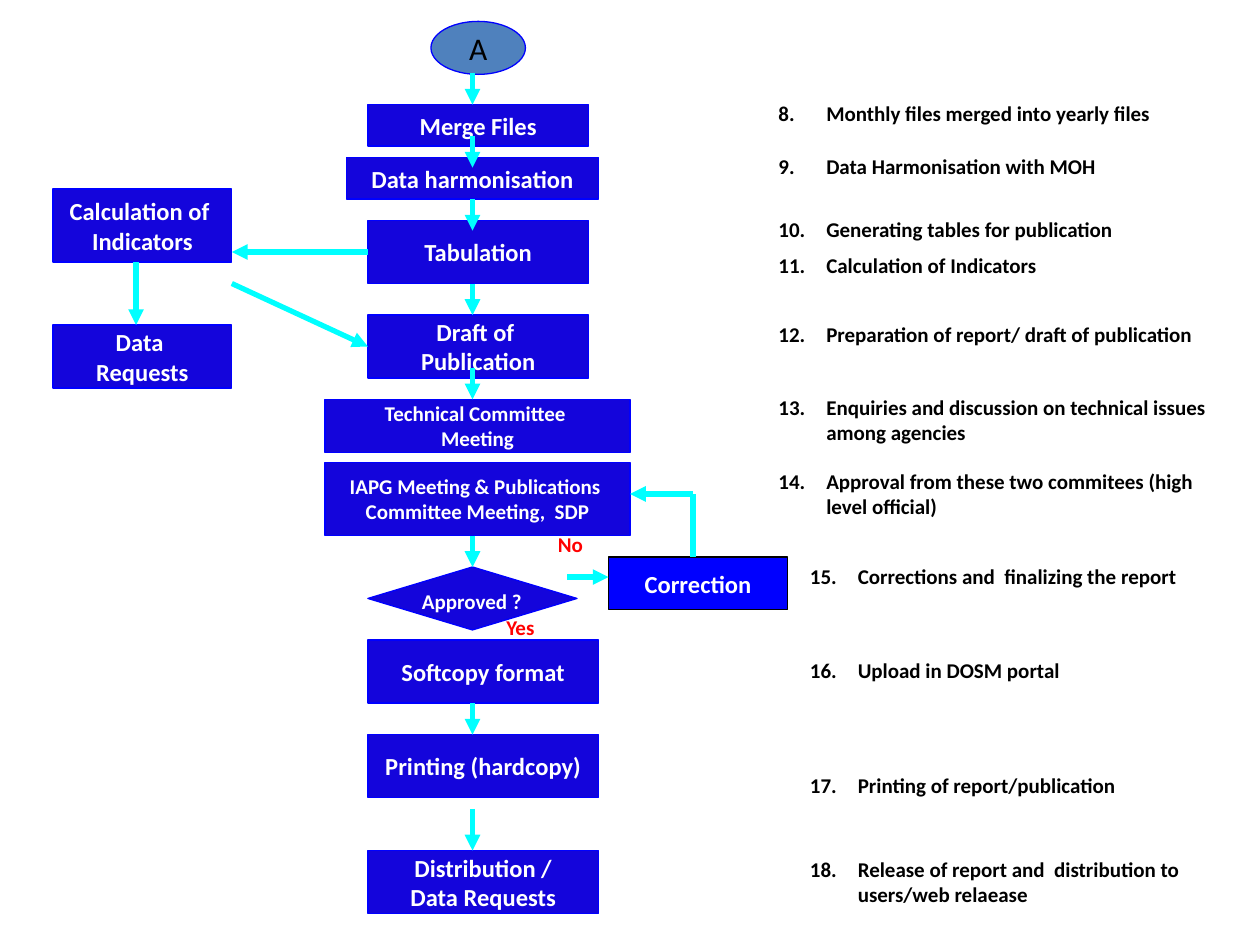
from dataclasses import dataclass

from lxml import etree
from pptx import Presentation
from pptx import util as u
from pptx.dml.color import RGBColor
from pptx.enum import shapes, text
from pptx.oxml.ns import qn


@dataclass(frozen=True)
class Theme:
    font: str = "Calibri"
    step: str = "1405DB"
    correction: str = "0000FF"
    start: str = "4F81BD"
    border: str = "0000FF"
    arrow: str = "00FFFF"
    dark: str = "000000"
    light: str = "FFFFFF"
    answer: str = "FF0000"
    start_size: int = 18
    step_size: int = 14
    small_size: int = 12
    border_width: float = 0.75
    arrow_width: float = 3


THEME = Theme()
SHAPE = shapes.MSO_SHAPE


@dataclass(frozen=True)
class Region:
    """Box in inches; its parts are placed from its top left corner."""
    left: float
    top: float
    width: float
    height: float

    def point(self, x, y):
        return u.Inches(self.left + x), u.Inches(self.top + y)

    def area(self, x, y, width, height):
        return *self.point(x, y), u.Inches(width), u.Inches(height)


def rgb(value):
    return RGBColor.from_string(value)


def write(frame, lines, size, color, bold=True, align=None):
    for index, line in enumerate(lines):
        paragraph = frame.add_paragraph() if index else frame.paragraphs[0]
        paragraph.text = line
        paragraph.alignment = align
        font = paragraph.font
        font.name, font.size, font.bold = THEME.font, u.Pt(size), bold
        font.color.rgb = rgb(color)


def add_node(slide, area, lines=(), size=THEME.step_size, kind=SHAPE.RECTANGLE,
             fill=THEME.step, border=THEME.border, color=THEME.light, bold=True):
    node = slide.shapes.add_shape(kind, *area)
    node.shadow.inherit = False
    node.fill.solid()
    node.fill.fore_color.rgb = rgb(fill)
    node.line.color.rgb = rgb(border)
    node.line.width = u.Pt(THEME.border_width)
    frame = node.text_frame
    frame.word_wrap = False
    frame.vertical_anchor = text.MSO_ANCHOR.MIDDLE
    write(frame, lines, size, color, bold, text.PP_ALIGN.CENTER)
    return node


def add_label(slide, area, lines, color):
    frame = slide.shapes.add_textbox(*area).text_frame
    frame.word_wrap = True
    frame.auto_size = text.MSO_AUTO_SIZE.SHAPE_TO_FIT_TEXT
    write(frame, lines, THEME.small_size, color)
    return frame


def add_arrow(slide, start, end, head=True):
    arrow = slide.shapes.add_connector(shapes.MSO_CONNECTOR.STRAIGHT, *start, *end)
    arrow.line.color.rgb = rgb(THEME.arrow)
    arrow.line.width = u.Pt(THEME.arrow_width)
    if head:
        etree.SubElement(arrow.line._get_or_add_ln(), qn("a:tailEnd"), type="triangle")
    etree.SubElement(arrow._element.spPr, qn("a:effectLst"))
    return arrow


def main_flow(slide, region):
    """Central column of steps; returns the nodes that side branches join."""
    inset, axis = 0.34, 1.17
    narrow, wide = 1.75, 1.83
    add_node(slide, region.area(0.84, 0, 0.75, 0.42), ["A"], THEME.start_size,
             SHAPE.OVAL, THEME.start, color=THEME.dark, bold=False)
    steps = [
        (inset, 0.66, narrow, 0.33, ["Merge Files"]),
        (0.17, 1.08, 2, 0.33, ["Data harmonisation"]),
        (inset, 1.58, narrow, 0.5, ["Tabulation"]),
        (inset, 2.33, narrow, 0.5, ["Draft of ", "Publication"]),
        (inset, 4.91, wide, 0.5, ["Softcopy format"]),
        (inset, 5.66, wide, 0.5, ["Printing (hardcopy)"]),
        (inset, 6.58, wide, 0.5, ["Distribution /", "Data Requests"]),
    ]
    nodes = {lines[0].strip(): add_node(slide, region.area(*place), lines)
             for *place, lines in steps}
    meetings = [
        (3, 0.42, ["Technical Committee ", "Meeting"]),
        (3.5, 0.58, ["IAPG Meeting & Publications ", "Committee Meeting,  SDP"]),
    ]
    for top, height, lines in meetings:
        add_node(slide, region.area(0, top, region.width, height), lines, THEME.small_size)
    decision = add_node(slide, region.area(inset, 4.33, 1.66, 0.5), kind=SHAPE.DIAMOND)

    for top in (0.41, 0.91, 1.41, 2.08, 2.75, 5.41):
        add_arrow(slide, region.point(axis, top), region.point(axis, top + 0.25))
    add_arrow(slide, region.point(axis, 6.25), region.point(axis, 6.58))
    to_decision = add_arrow(slide, region.point(axis, 4.08), region.point(axis, 4.33))
    to_decision.end_connect(decision, 0)

    add_label(slide, region.area(0.67, 4.45, 1.25, 0.3), ["Approved ?"], THEME.light)
    add_label(slide, region.area(1.34, 4.66, 1, 0.3), ["Yes"], THEME.answer)
    return nodes["Tabulation"], nodes["Draft of"]


def indicator_branch(slide, region, tabulation, draft):
    width, axis = 1.42, 0.66
    add_node(slide, region.area(0, 0, width, 0.58), ["Calculation of ", "Indicators"])
    add_node(slide, region.area(0, 1.08, width, 0.5), ["Data ", "Requests"])
    add_arrow(slide, region.point(axis, 0.58), region.point(axis, 1.08))
    from_tabulation = add_arrow(slide, region.point(region.width, 0.5),
                                region.point(width, 0.5))
    from_tabulation.begin_connect(tabulation, 1)
    to_draft = add_arrow(slide, region.point(width, 0.75),
                         region.point(region.width, 1.25))
    to_draft.end_connect(draft, 1)


def correction_loop(slide, region):
    corner = region.point(1.17, 0)
    add_node(slide, region.area(0.5, 0.5, 1.42, 0.42), ["Correction"],
             fill=THEME.correction, border=THEME.dark)
    add_arrow(slide, region.point(1.17, 0.5), corner, head=False)
    add_arrow(slide, corner, region.point(0.67, 0))
    add_arrow(slide, region.point(0.17, 0.66), region.point(0.5, 0.66))
    add_label(slide, region.area(0, 0.25, 1, 0.3), ["No"], THEME.answer)


def step_notes(slide, region):
    """Numbered remarks beside the steps; those from 15 on stand further right."""
    shift, hanging = 0.25, u.Inches(0.38)
    notes = [
        (0, 0, 0.3, ["8.\tMonthly files merged into yearly files"]),
        (0, 0.42, 0.3, ["9.\tData Harmonisation with MOH"]),
        (0, 0.92, 0.61, ["10.\tGenerating tables for publication",
                         "11.\tCalculation of Indicators"]),
        (0, 1.75, 0.3, ["12.\tPreparation of report/ draft of publication"]),
        (0, 2.33, 0.5, ["13.\tEnquiries and discussion on technical issues among agencies"]),
        (0, 2.92, 0.5, ["14.\tApproval from these two commitees (high level official)"]),
        (shift, 3.67, 0.3, ["15.\tCorrections and  finalizing the report"]),
        (shift, 4.42, 0.3, ["16.\tUpload in DOSM portal"]),
        (shift, 5.33, 0.3, ["17.\tPrinting of report/publication"]),
        (shift, 6, 0.5, ["18.\tRelease of report and  distribution to users/web relaease"]),
    ]
    for left, top, height, lines in notes:
        frame = add_label(slide, region.area(left, top, region.width - shift, height),
                          lines, THEME.dark)
        for index, paragraph in enumerate(frame.paragraphs):
            properties = paragraph._p.get_or_add_pPr()
            properties.set("marL", str(hanging))
            properties.set("indent", str(-hanging))
            if index:
                paragraph.space_before = u.Pt(6)


def main():
    deck = Presentation()
    deck.slide_width, deck.slide_height = u.Inches(10), u.Inches(7.5)
    slide = deck.slides.add_slide(deck.slide_layouts[6])
    tabulation, draft = main_flow(slide, Region(2.58, 0.17, 2.42, 7.08))
    indicator_branch(slide, Region(0.42, 1.5, 2.5, 1.58), tabulation, draft)
    correction_loop(slide, Region(4.33, 3.92, 1.92, 0.92))
    step_notes(slide, Region(6.08, 0.75, 3.85, 6.5))
    deck.save("out.pptx")


if __name__ == "__main__":
    main()
